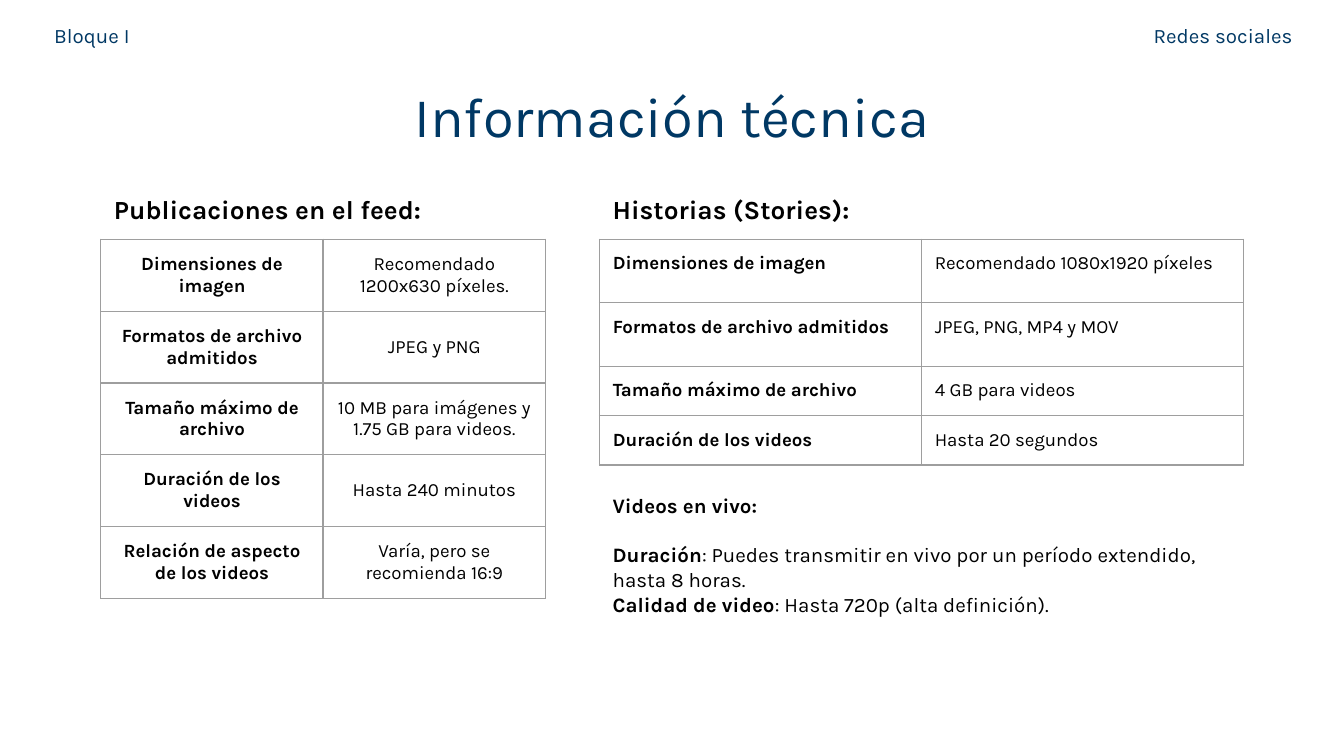
from dataclasses import dataclass

from lxml.etree import SubElement
from pptx import Presentation
from pptx.dml.color import RGBColor
from pptx.enum.text import MSO_ANCHOR as Anchor, PP_ALIGN as Align
from pptx.oxml.ns import qn
from pptx.util import Pt


@dataclass(frozen=True)
class Theme:
    font: str = "Karla"
    navy: str = "003864"
    black: str = "000000"
    grid: str = "9E9E9E"
    title: float = 30
    heading: float = 14
    body: float = 11
    cell: float = 10
    border: float = 0.75
    inset: float = 7.2


@dataclass(frozen=True)
class Span:
    text: str
    bold: bool = False


@dataclass(frozen=True)
class Para:
    spans: tuple[Span, ...]
    before: float = 0


@dataclass(frozen=True)
class Box:
    left: float
    top: float
    width: float
    height: float
    paras: tuple[Para, ...]
    size: float
    color: str
    align: Align = Align.LEFT


@dataclass(frozen=True)
class Grid:
    left: float
    column: float
    heights: tuple[float, ...]
    rows: tuple[tuple[str, str], ...]
    align: Align
    anchor: Anchor


THEME = Theme()
LEFT, RIGHT = 54, 321.1
HEADING_TOP, GRID_TOP = 96.3, 128.2


def line(text: str, bold: bool = False) -> tuple[Para, ...]:
    return (Para((Span(text, bold),)),)


BOXES = (
    # Running header and title
    Box(21.9, 5.9, 64, 28, line("Bloque I"), THEME.body, THEME.navy),
    Box(546.2, 5.9, 153.4, 28, line("Redes sociales"), THEME.body, THEME.navy, Align.RIGHT),
    Box(LEFT, 36.7, 612, 51, line("Información técnica"), THEME.title, THEME.navy, Align.CENTER),
    # Column headings
    Box(LEFT, HEADING_TOP, 227, 32, line("Publicaciones en el feed:", True), THEME.heading, THEME.black),
    Box(RIGHT, HEADING_TOP, 345, 32, line("Historias (Stories):", True), THEME.heading, THEME.black),
    # Live video notes
    Box(RIGHT, 257, 345, 108, (
        Para((Span("Videos en vivo:", True),)),
        Para((Span("Duración", True),
              Span(": Puedes transmitir en vivo por un período extendido, hasta 8 horas.")), before=13.1),
        Para((Span("Calidad de video", True), Span(": Hasta 720p (alta definición)."))),
    ), THEME.body, THEME.black),
)

GRIDS = (
    Grid(LEFT, 119.1, (38.4,) * 5, (
        ("Dimensiones de imagen", "Recomendado 1200x630 píxeles."),
        ("Formatos de archivo admitidos", "JPEG y PNG"),
        ("Tamaño máximo de archivo", "10 MB para imágenes y 1.75 GB para videos."),
        ("Duración de los videos", "Hasta 240 minutos"),
        ("Relación de aspecto de los videos", "Varía, pero se recomienda 16:9"),
    ), Align.CENTER, Anchor.MIDDLE),
    Grid(RIGHT, 172.5, (34, 34, 26.4, 26.4), (
        ("Dimensiones de imagen", "Recomendado 1080x1920 píxeles"),
        ("Formatos de archivo admitidos", "JPEG, PNG, MP4 y MOV"),
        ("Tamaño máximo de archivo", "4 GB para videos"),
        ("Duración de los videos", "Hasta 20 segundos"),
    ), Align.LEFT, Anchor.TOP),
)


def apply(target, values: dict) -> None:
    for name, value in values.items():
        setattr(target, name, value)


def margins() -> dict:
    return {f"margin_{side}": Pt(THEME.inset) for side in ("left", "top", "right", "bottom")}


def write(frame, paras: tuple[Para, ...], size: float, color: str, align: Align) -> None:
    for index, item in enumerate(paras):
        para = frame.add_paragraph() if index else frame.paragraphs[0]
        para.alignment = align
        if item.before:
            para.space_before = Pt(item.before)
        for span in item.spans:
            run = para.add_run()
            run.text = span.text
            apply(run.font, {"name": THEME.font, "size": Pt(size), "bold": span.bold})
            run.font.color.rgb = RGBColor.from_string(color)


def draw_box(page, box: Box) -> None:
    shape = page.shapes.add_textbox(Pt(box.left), Pt(box.top), Pt(box.width), Pt(box.height))
    apply(shape.text_frame, {"word_wrap": True, "vertical_anchor": Anchor.TOP, **margins()})
    write(shape.text_frame, box.paras, box.size, box.color, box.align)


def draw_borders(cell) -> None:
    properties = cell._tc.get_or_add_tcPr()
    for side in ("a:lnL", "a:lnR", "a:lnT", "a:lnB"):
        edge = SubElement(properties, qn(side), w=str(Pt(THEME.border)))
        SubElement(SubElement(edge, qn("a:solidFill")), qn("a:srgbClr"), val=THEME.grid)


def draw_grid(page, grid: Grid) -> None:
    table = page.shapes.add_table(
        len(grid.rows), 2, Pt(grid.left), Pt(GRID_TOP),
        Pt(2 * grid.column), Pt(sum(grid.heights))).table
    apply(table, {"first_row": False, "horz_banding": False})
    for column in table.columns:
        column.width = Pt(grid.column)
    for row, height, texts in zip(table.rows, grid.heights, grid.rows):
        row.height = Pt(height)
        for index, (cell, text) in enumerate(zip(row.cells, texts)):
            apply(cell, {"vertical_anchor": grid.anchor, **margins()})
            draw_borders(cell)  # borders precede the fill in the cell properties
            cell.fill.background()
            write(cell.text_frame, line(text, index == 0), THEME.cell, THEME.black, grid.align)


def main() -> None:
    deck = Presentation()
    apply(deck, {"slide_width": Pt(720), "slide_height": Pt(405)})
    page = deck.slides.add_slide(deck.slide_layouts[6])
    for box in BOXES:
        draw_box(page, box)
    for grid in GRIDS:
        draw_grid(page, grid)
    deck.save("out.pptx")


if __name__ == "__main__":
    main()
